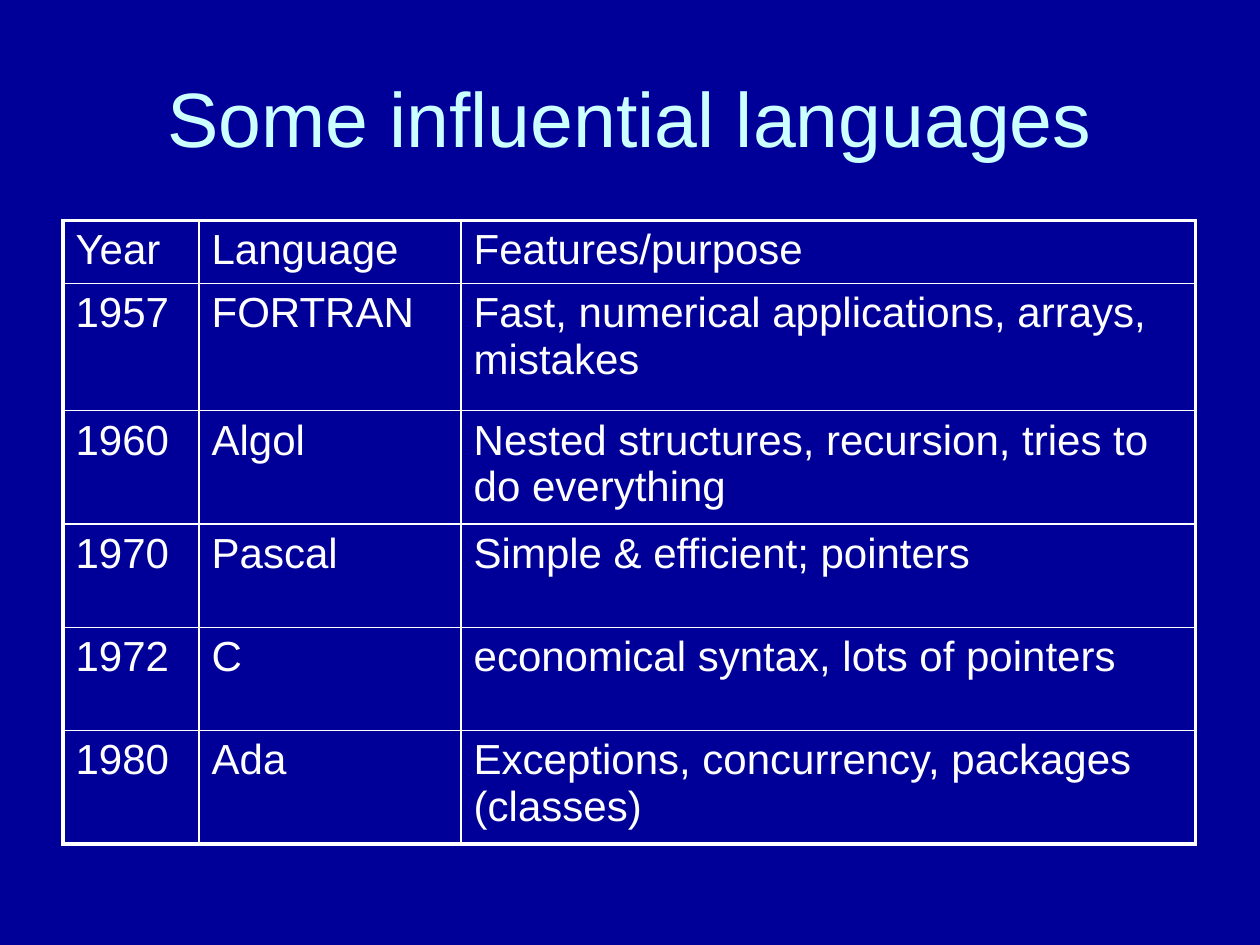
from lxml import etree
from pptx import Presentation
from pptx.dml.color import RGBColor
from pptx.enum.text import MSO_ANCHOR, PP_ALIGN
from pptx.oxml.ns import qn
from pptx.util import Inches, Pt

CENTER = PP_ALIGN.CENTER
MIDDLE = MSO_ANCHOR.MIDDLE
COLORS = {"back": "000099", "title": "CCFFFF", "text": "FFFFFF", "line": "FFFFFF"}
FONT = "Arial"
THIN, THICK = 1, 2.25

ROWS = [
    ("Year", "Language", "Features/purpose"),
    ("1957", "FORTRAN", "Fast, numerical applications, arrays, mistakes"),
    ("1960", "Algol", "Nested structures, recursion, tries to do everything"),
    ("1970", "Pascal", "Simple & efficient; pointers"),
    ("1972", "C", "economical syntax, lots of pointers"),
    ("1980", "Ada", "Exceptions, concurrency, packages (classes)"),
]
WIDTHS = [1.08, 2.08, 5.83]
HEIGHTS = [0.5, 1.01, 0.9, 0.82, 0.82, 0.9]


def style(para, size, color):
    form = {"name": FONT, "size": Pt(size)}
    for key, value in form.items():
        setattr(para.font, key, value)
    para.font.color.rgb = RGBColor.from_string(COLORS[color])


def border(cell, widths):
    """Draw the cell's sides; the schema wants lines ahead of the fill."""
    props = cell._tc.get_or_add_tcPr()
    for place, (side, width) in enumerate(widths.items()):
        line = etree.Element(qn(f"a:ln{side}"), w=str(Pt(width)))
        fill = etree.SubElement(line, qn("a:solidFill"))
        etree.SubElement(fill, qn("a:srgbClr"), val=COLORS["line"])
        props.insert(place, line)


# Slide and background
prs = Presentation()
prs.slide_width, prs.slide_height = Inches(10), Inches(7.5)
slide = prs.slides.add_slide(prs.slide_layouts[5])
back = slide.background.fill
back.solid()
back.fore_color.rgb = RGBColor.from_string(COLORS["back"])

# Title
title = slide.shapes.title
title.left, title.top = Inches(0.5), Inches(0.3)
title.width, title.height = Inches(9), Inches(1.25)
title.text_frame.text = "Some influential languages"
title.text_frame.vertical_anchor = MIDDLE
head = title.text_frame.paragraphs[0]
head.alignment = CENTER
style(head, 44, "title")

# Table grid
table = slide.shapes.add_table(
    len(ROWS), len(WIDTHS), Inches(0.5), Inches(1.75),
    Inches(sum(WIDTHS)), Inches(sum(HEIGHTS))).table
table.first_row = table.horz_banding = False
for col, width in zip(table.columns, WIDTHS):
    col.width = Inches(width)
for row, height in zip(table.rows, HEIGHTS):
    row.height = Inches(height)

# Cells: thick lines on the outer frame, thin ones inside
last_row, last_col = len(ROWS) - 1, len(WIDTHS) - 1
for r, row in enumerate(ROWS):
    for c, text in enumerate(row):
        cell = table.cell(r, c)
        cell.text = text
        cell.fill.background()
        style(cell.text_frame.paragraphs[0], 24, "text")
        outer = {"L": c == 0, "R": c == last_col, "T": r == 0, "B": r == last_row}
        border(cell, {side: THICK if edge else THIN for side, edge in outer.items()})

prs.save("out.pptx")
